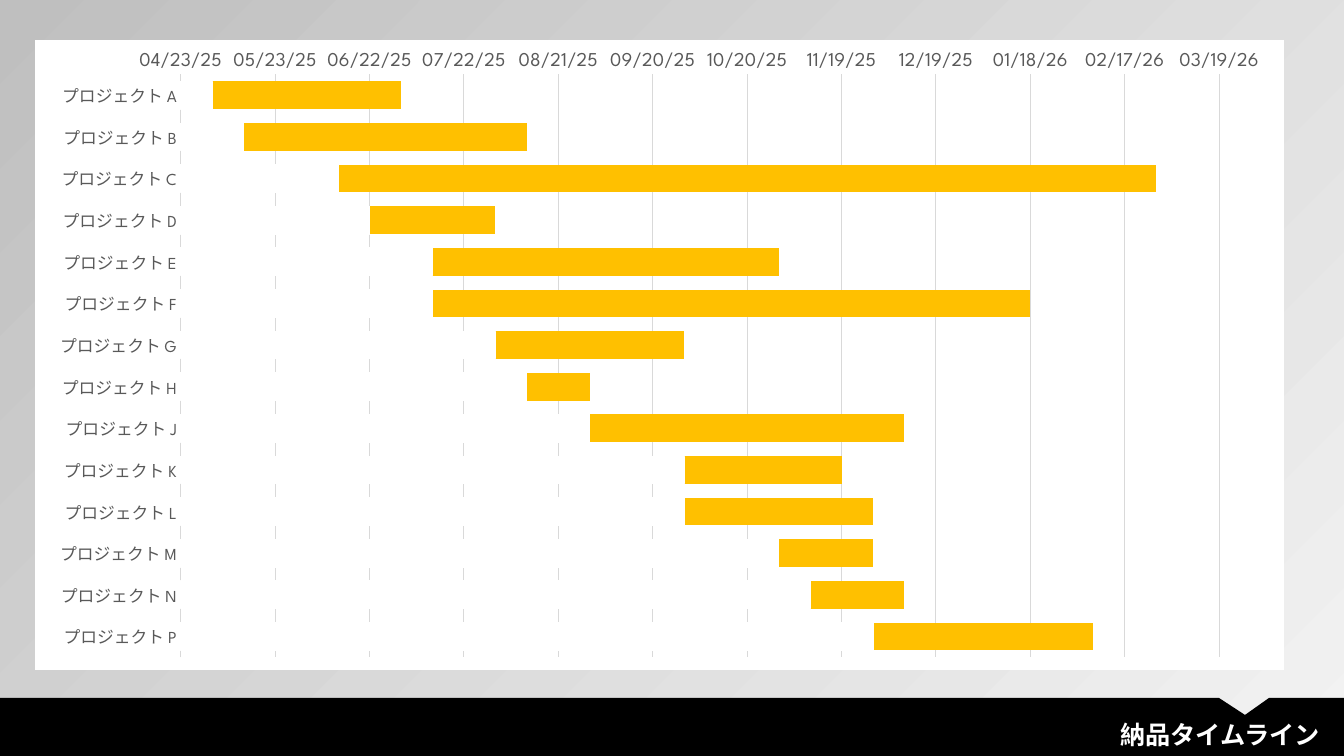
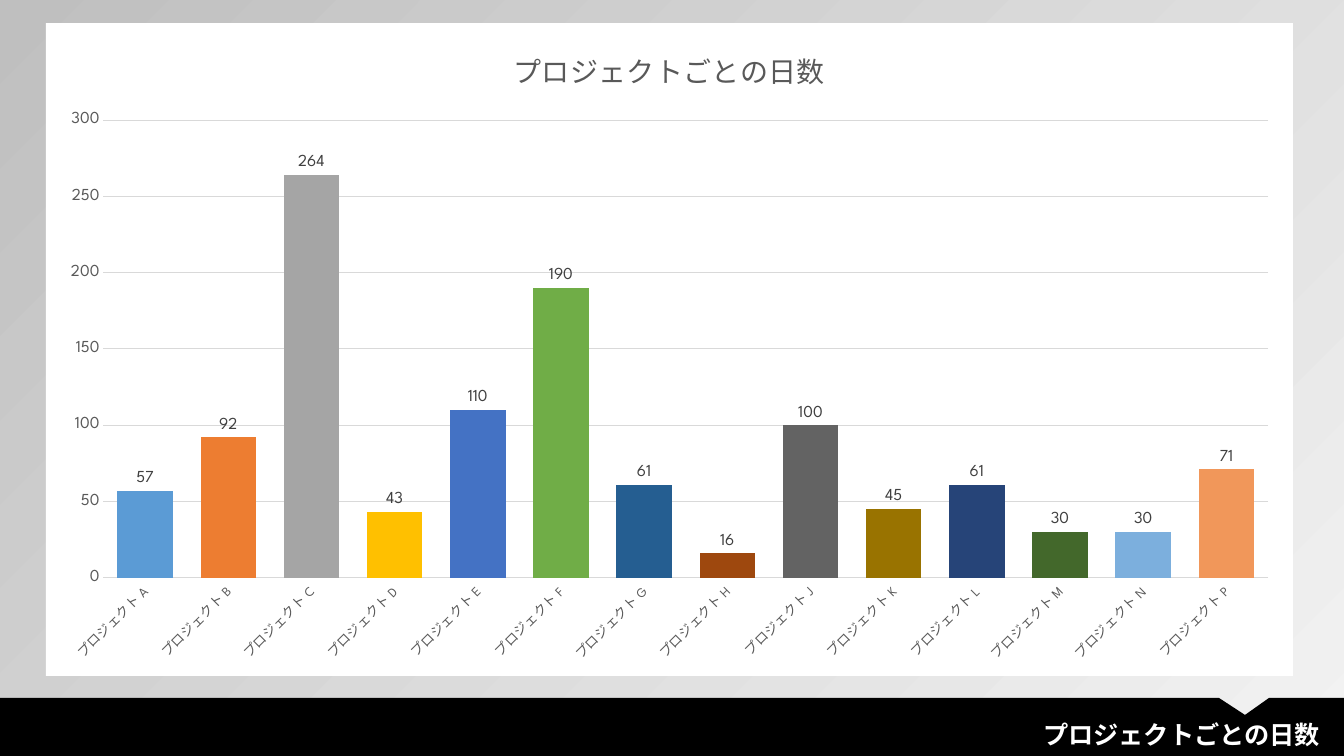
from pptx import Presentation
from pptx.chart.data import CategoryChartData
from pptx.dml.color import RGBColor
from pptx.enum.chart import XL_CHART_TYPE as ChartType
from pptx.enum.chart import XL_LABEL_POSITION as LabelPosition
from pptx.enum.chart import XL_TICK_MARK as TickMark
from pptx.enum.text import MSO_AUTO_SIZE as AutoSize
from pptx.enum.text import PP_ALIGN as Align
from pptx.oxml import parse_xml
from pptx.oxml.ns import nsdecls, qn
from pptx.util import Emu, Pt

PX = 914400 / 100.8
WIDTH, HEIGHT = 1344, 756
FONT = "League Spartan"
BLACK, WHITE, GOLD = "000000", "FFFFFF", "FFC000"
AXIS_TEXT, LABEL_TEXT, GRID = "595959", "404040", "D9D9D9"
BACKDROP = ("F2F2F2", "BFBFBF")
BAND_OUTLINE = [(0, 698), (1219, 698), (1245, 715), (1269, 698),
                (WIDTH, 698), (WIDTH, HEIGHT), (0, HEIGHT)]

PROJECTS = [f"プロジェクト {letter}" for letter in "ABCDEFGHJKLMNP"]
START_DAYS = [45780, 45790, 45820, 45830, 45850, 45850, 45870,
              45880, 45900, 45930, 45930, 45960, 45970, 45990]
END_DAYS = [45840, 45880, 46080, 45870, 45960, 46040, 45930,
            45900, 46000, 45980, 45990, 45990, 46000, 46060]
DURATIONS = [57, 92, 264, 43, 110, 190, 61, 16, 100, 45, 61, 30, 30, 71]
PROJECT_COLORS = ["5B9BD5", "ED7D31", "A5A5A5", GOLD, "4472C4", "70AD47", "255E91",
                  "9E480E", "636363", "997300", "264478", "43682B", "7CAFDD", "F1975A"]

TIMELINE_SCALE = {"minimum_scale": 45770, "maximum_scale": 46100, "major_unit": 30}
DURATION_SCALE = {"minimum_scale": 0, "maximum_scale": 300, "major_unit": 50}
DATE_FORMAT = {"number_format": "mm/dd/yy;@", "number_format_is_linked": False}


def px(length):
    """Turn a length in px into EMU."""
    return Emu(round(length * PX))


def rgb(color):
    """Turn a hex string into a colour."""
    return RGBColor.from_string(color)


def apply(target, values):
    """Set each named attribute of the target."""
    for name, value in values.items():
        setattr(target, name, value)


def paint(fill, color):
    """Give a fill one solid colour."""
    fill.solid()
    fill.fore_color.rgb = rgb(color)


def style_font(font, size, color, bold=False):
    """Set the typeface, size, colour and weight of a font."""
    apply(font, {"name": FONT, "size": Pt(size), "bold": bold})
    font.color.rgb = rgb(color)


def draw_line(line, color):
    """Make a thin line of one colour."""
    line.width = Pt(0.75)
    paint(line.fill, color)


def add_backdrop(slide):
    """Fill the slide with the diagonal grey gradient."""
    fill = slide.background.fill
    fill.gradient()
    fill.gradient_angle = 135
    for stop, color, position in zip(fill.gradient_stops, BACKDROP, (0, 1)):
        stop.color.rgb = rgb(color)
        stop.position = position


def add_band(slide):
    """Draw the black notched band along the bottom."""
    builder = slide.shapes.build_freeform(*BAND_OUTLINE[0], scale=PX)
    builder.add_line_segments(BAND_OUTLINE[1:], close=True)
    band = builder.convert_to_shape()
    band.shadow.inherit = False
    paint(band.fill, BLACK)
    band.line.fill.background()


def add_heading(slide, text):
    """Write the slide heading at the right of the band."""
    frame = slide.shapes.add_textbox(px(417), px(714), px(913), px(40)).text_frame
    apply(frame, {"word_wrap": True, "auto_size": AutoSize.SHAPE_TO_FIT_TEXT})
    heading = frame.paragraphs[0]
    heading.alignment = Align.RIGHT
    run = heading.add_run()
    run.text = text
    style_font(run.font, 18, WHITE, bold=True)


def add_framed_slide(prs, heading):
    """Add a slide with the shared backdrop, band and heading."""
    slide = prs.slides.add_slide(prs.slide_layouts[6])
    add_backdrop(slide)
    add_band(slide)
    add_heading(slide, heading)
    return slide


def add_project_chart(slide, kind, box, series, font_size):
    """Add a chart over all projects on a white panel."""
    data = CategoryChartData()
    data.categories = PROJECTS
    for name, values in series.items():
        data.add_series(name, values)
    chart = slide.shapes.add_chart(kind, *map(px, box), data).chart
    apply(chart, {"has_legend": False, "has_title": False})
    style_font(chart.font, font_size, BLACK)
    panel = parse_xml(
        f'<c:spPr {nsdecls("c", "a")}><a:solidFill><a:srgbClr val="{WHITE}"/></a:solidFill>'
        "<a:ln><a:noFill/></a:ln></c:spPr>")
    chart.element.find(qn("c:chart")).addnext(panel)
    apply(chart.plots[0], {"gap_width": 50, "vary_by_categories": False})
    return chart


def style_axes(chart, project_size, value_size, scale):
    """Style the project axis, the value axis and its gridlines."""
    for axis, size in ((chart.category_axis, project_size), (chart.value_axis, value_size)):
        apply(axis, {"major_tick_mark": TickMark.NONE, "minor_tick_mark": TickMark.NONE})
        style_font(axis.tick_labels.font, size, AXIS_TEXT)
    draw_line(chart.category_axis.format.line, GRID)
    chart.value_axis.format.line.fill.background()
    apply(chart.value_axis, scale)
    chart.value_axis.has_major_gridlines = True
    draw_line(chart.value_axis.major_gridlines.format.line, GRID)


def add_timeline(slide):
    """Add the timeline, with white bars hiding the days before each start."""
    chart = add_project_chart(slide, ChartType.BAR_CLUSTERED, (35, 40, 1249, 630),
                              {"Series 1": END_DAYS, "Series 2": START_DAYS}, 14)
    style_axes(chart, 12, 14, TIMELINE_SCALE)
    chart.category_axis.reverse_order = True
    apply(chart.value_axis.tick_labels, DATE_FORMAT)
    plot = chart.plots[0]
    plot.overlap = 100
    ends, starts = plot.series
    paint(ends.format.fill, GOLD)
    paint(starts.format.fill, WHITE)
    draw_line(starts.format.line, WHITE)


def add_durations(slide, title):
    """Add the columns of days, one colour for each project."""
    chart = add_project_chart(slide, ChartType.COLUMN_CLUSTERED, (46, 23, 1247, 653),
                              {"Series 1": DURATIONS}, 10)
    style_axes(chart, 9.5, 12, DURATION_SCALE)
    project_axis = chart.element.find(".//" + qn("c:catAx"))
    project_axis.find(f"{qn('c:txPr')}/{qn('a:bodyPr')}").set("rot", "-2700000")
    chart.has_title = True
    run = chart.chart_title.text_frame.paragraphs[0].add_run()
    run.text = title
    style_font(run.font, 20, AXIS_TEXT)
    plot = chart.plots[0]
    plot.has_data_labels = True
    apply(plot.data_labels, {"show_value": True, "position": LabelPosition.OUTSIDE_END})
    style_font(plot.data_labels.font, 12, LABEL_TEXT)
    for index, color in enumerate(PROJECT_COLORS):
        paint(plot.series[0].points[index].format.fill, color)


def main():
    """Build and save the two slides."""
    prs = Presentation()
    apply(prs, {"slide_width": px(WIDTH), "slide_height": px(HEIGHT)})
    add_timeline(add_framed_slide(prs, "納品タイムライン"))
    duration_title = "プロジェクトごとの日数"
    add_durations(add_framed_slide(prs, duration_title), duration_title)
    prs.save("out.pptx")


if __name__ == "__main__":
    main()
